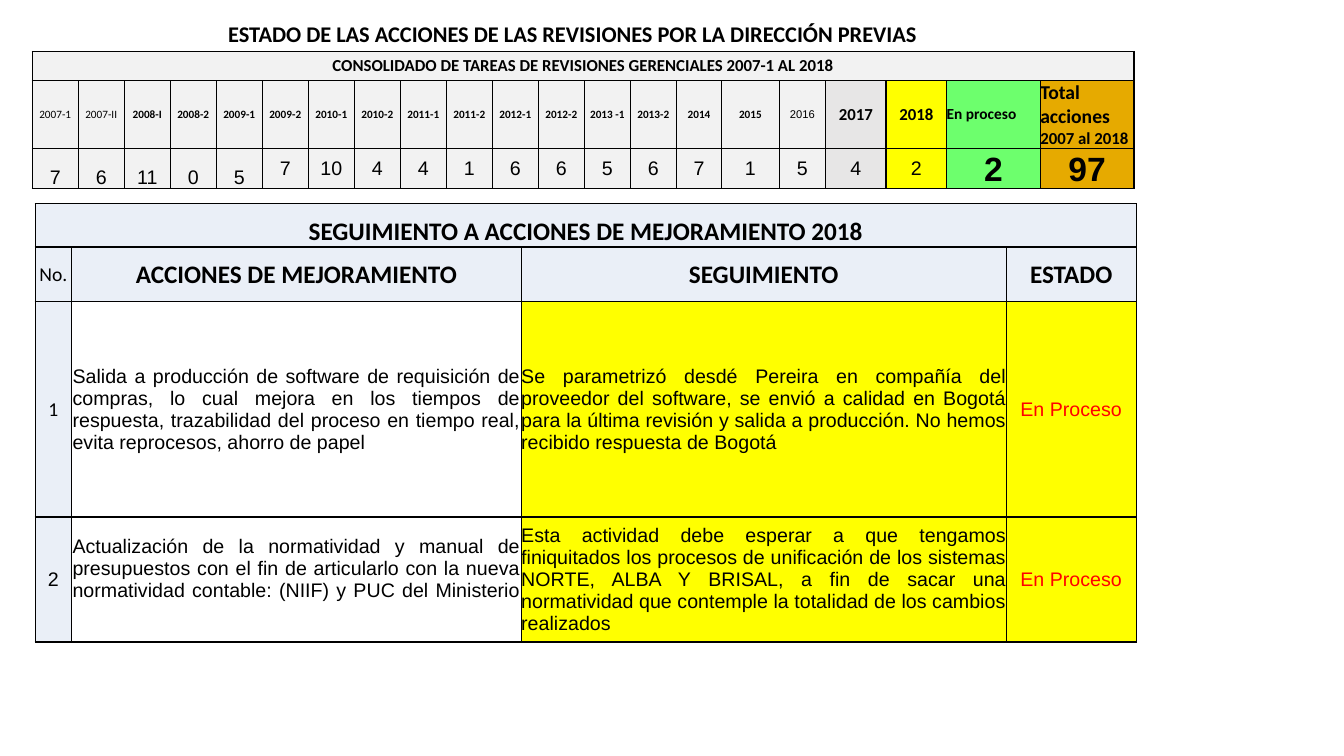
from dataclasses import dataclass

import lxml.etree
import pptx
import pptx.dml.color
import pptx.enum.text
import pptx.oxml.ns
import pptx.util

Inches = pptx.util.Inches
Pt = pptx.util.Pt
Align = pptx.enum.text.PP_ALIGN
Anchor = pptx.enum.text.MSO_ANCHOR

COLORS = {
    "black": "000000",
    "red": "FF0000",
    "white": "FFFFFF",
    "light gray": "F2F2F2",
    "gray": "E7E6E6",
    "yellow": "FFFF00",
    "green": "6DFF6D",
    "gold": "E6AA00",
    "pale blue": "EAEFF7",
}


@dataclass(frozen=True)
class Entry:
    text: str
    size: float
    fill: str
    font: str = "Calibri"
    bold: bool = False
    color: str = "black"
    align: Align = Align.CENTER
    anchor: Anchor = Anchor.MIDDLE
    inset: float = 0
    second_line: str = ""
    second_size: float = 0
    ends_with_break: bool = False


@dataclass(frozen=True)
class Grid:
    left: float
    top: float
    widths: list[float]
    heights: list[float]
    heading: Entry
    rows: list[list[Entry]]


def rgb(color: str) -> pptx.dml.color.RGBColor:
    return pptx.dml.color.RGBColor.from_string(COLORS[color])


def write(paragraph, text: str, size: float, font: str, bold: bool, color: str, align: Align) -> None:
    paragraph.text = text
    paragraph.alignment = align
    paragraph.font.size = Pt(size)
    paragraph.font.name = font
    paragraph.font.bold = bold
    paragraph.font.color.rgb = rgb(color)


def outline(cell) -> None:
    qn = pptx.oxml.ns.qn
    properties = cell._tc.get_or_add_tcPr()
    for position, side in enumerate(("a:lnL", "a:lnR", "a:lnT", "a:lnB")):
        border = lxml.etree.Element(qn(side), w=str(Pt(1)))
        line_fill = lxml.etree.SubElement(border, qn("a:solidFill"))
        lxml.etree.SubElement(line_fill, qn("a:srgbClr"), val=COLORS["black"])
        properties.insert(position, border)


def fill_cell(cell, entry: Entry) -> None:
    cell.fill.solid()
    cell.fill.fore_color.rgb = rgb(entry.fill)
    cell.vertical_anchor = entry.anchor
    cell.margin_left = cell.margin_right = cell.margin_top = Inches(entry.inset)
    cell.margin_bottom = 0
    style = (entry.font, entry.bold, entry.color, entry.align)
    first = cell.text_frame.paragraphs[0]
    write(first, entry.text, entry.size, *style)
    if entry.ends_with_break:
        first.add_line_break()
    if entry.second_line:
        write(cell.text_frame.add_paragraph(), entry.second_line, entry.second_size, *style)


def draw_grid(slide, grid: Grid) -> None:
    table = slide.shapes.add_table(
        len(grid.heights), len(grid.widths), Inches(grid.left), Inches(grid.top),
        Inches(sum(grid.widths)), Inches(sum(grid.heights))).table
    table.first_row = table.horz_banding = False
    for column, width in zip(table.columns, grid.widths):
        column.width = Inches(width)
    for row, height in zip(table.rows, grid.heights):
        row.height = Inches(height)
    table.cell(0, 0).merge(table.cell(0, len(grid.widths) - 1))
    fill_cell(table.cell(0, 0), grid.heading)
    for row_index, entries in enumerate(grid.rows, start=1):
        for column_index, entry in enumerate(entries):
            fill_cell(table.cell(row_index, column_index), entry)
    for cell in table.iter_cells():
        outline(cell)


def consolidated_tasks() -> Grid:
    bold_terms = ["2008-I", "2008-2", "2009-1", "2009-2", "2010-1", "2010-2", "2011-1",
                  "2011-2", "2012-1", "2012-2", "2013 -1", "2013-2", "2014", "2015"]
    terms = [
        *[Entry(term, 8, "light gray") for term in ("2007-1", "2007-II")],
        *[Entry(term, 8, "light gray", bold=True) for term in bold_terms],
        Entry("2016", 8, "light gray", "Arial"),
        Entry("2017", 12, "gray", bold=True),
        Entry("2018", 12, "yellow", bold=True),
        Entry("En proceso", 11, "green", bold=True, align=Align.JUSTIFY),
        Entry("Total acciones", 14, "gold", bold=True, align=Align.JUSTIFY,
              second_line="2007 al 2018", second_size=12),
    ]
    task_counts = [7, 6, 11, 0, 5, 7, 10, 4, 4, 1, 6, 6, 5, 6, 7, 1, 5, 4, 2]
    low_counts = 5
    counts = [
        Entry(str(count), 14, term.fill, "Arial",
              anchor=Anchor.BOTTOM if index < low_counts else Anchor.MIDDLE)
        for index, (count, term) in enumerate(zip(task_counts, terms))
    ]
    totals = [Entry(total, 24, fill, "Arial", True, anchor=Anchor.BOTTOM)
              for total, fill in (("2", "green"), ("97", "gold"))]
    return Grid(
        0.32, 0.51,
        [6.39 / 14] * 14 + [0.45, 0.57, 0.46, 0.6, 0.6, 0.93, 0.93],
        [0.29, 0.67, 0.4],
        Entry("CONSOLIDADO DE TAREAS DE REVISIONES GERENCIALES 2007-1 AL 2018", 12,
              "light gray", bold=True),
        [terms, counts + totals])


def action_row(number: str, number_font: str, action: str, follow_up: str,
               ends_with_break: bool = False) -> list[Entry]:
    return [
        Entry(number, 14, "pale blue", number_font, inset=0.01),
        Entry(action, 14, "white", "Arial", align=Align.JUSTIFY, inset=0.01,
              ends_with_break=ends_with_break),
        Entry(follow_up, 14, "yellow", "Arial", align=Align.JUSTIFY),
        Entry("En Proceso", 14, "yellow", "Arial", color="red", inset=0.01),
    ]


def improvement_actions() -> Grid:
    headers = [Entry("No.", 14, "pale blue", inset=0.01)]
    headers += [Entry(name, 18, "pale blue", bold=True, inset=0.01)
                for name in ("ACCIONES DE MEJORAMIENTO", "SEGUIMIENTO", "ESTADO")]
    return Grid(
        0.35, 2.02, [0.36, 4.46, 4.81, 1.29], [0.43, 0.54, 2.14, 1.24],
        Entry("SEGUIMIENTO A ACCIONES DE MEJORAMIENTO 2018", 18, "pale blue", bold=True,
              anchor=Anchor.BOTTOM, inset=0.01),
        [
            headers,
            action_row(
                "1", "Calibri",
                "Salida a producción de software de requisición de compras, lo cual mejora en "
                "los tiempos de respuesta, trazabilidad del proceso en tiempo real, evita "
                "reprocesos, ahorro de papel",
                "Se parametrizó desdé Pereira en compañía del proveedor del software, se envió "
                "a calidad en Bogotá para la última revisión y salida a producción. No hemos "
                "recibido respuesta de Bogotá"),
            action_row(
                "2", "Arial",
                "Actualización de la normatividad y manual de presupuestos con el fin de "
                "articularlo con la nueva normatividad contable: (NIIF) y PUC del Ministerio",
                "Esta actividad debe esperar a que tengamos finiquitados los procesos de "
                "unificación de los sistemas NORTE, ALBA Y BRISAL, a fin de sacar una "
                "normatividad que contemple la totalidad de los cambios realizados",
                ends_with_break=True),
        ])


def main() -> None:
    presentation = pptx.Presentation()
    presentation.slide_width = Inches(13.33)
    presentation.slide_height = Inches(7.5)
    slide = presentation.slides.add_slide(presentation.slide_layouts[6])
    title = slide.shapes.add_textbox(Inches(0.2), Inches(0.15), Inches(10.96), Inches(0.37))
    title.text_frame.word_wrap = True
    write(title.text_frame.paragraphs[0],
          "ESTADO DE LAS ACCIONES DE LAS REVISIONES POR LA DIRECCIÓN PREVIAS",
          16, "Calibri", True, "black", Align.CENTER)
    for grid in (consolidated_tasks(), improvement_actions()):
        draw_grid(slide, grid)
    presentation.save("out.pptx")


if __name__ == "__main__":
    main()
